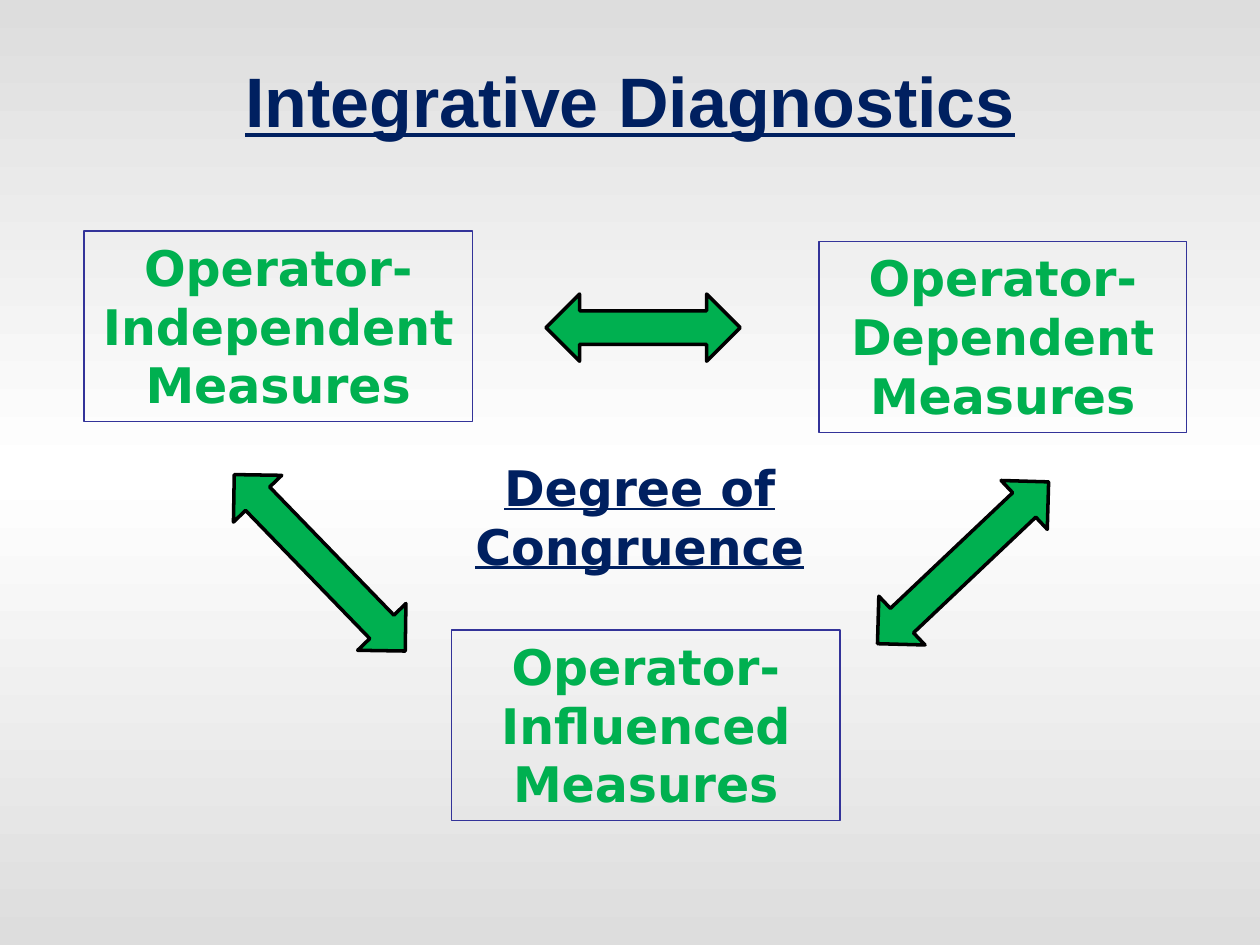
from copy import deepcopy

from pptx import Presentation
from pptx.dml.color import RGBColor
from pptx.enum.shapes import MSO_SHAPE
from pptx.enum.text import MSO_ANCHOR, MSO_AUTO_SIZE, PP_ALIGN
from pptx.util import Pt

RECTANGLE = MSO_SHAPE.RECTANGLE
DOUBLE_ARROW = MSO_SHAPE.LEFT_RIGHT_ARROW
TOP, MIDDLE = MSO_ANCHOR.TOP, MSO_ANCHOR.MIDDLE
GROW, FIXED = MSO_AUTO_SIZE.SHAPE_TO_FIT_TEXT, MSO_AUTO_SIZE.NONE
CENTER = PP_ALIGN.CENTER

NAVY = RGBColor(0x00, 0x20, 0x60)
GREEN = RGBColor(0x00, 0xB0, 0x50)
BORDER = RGBColor(0x33, 0x33, 0x99)
BLACK = RGBColor(0x00, 0x00, 0x00)
WHITE = RGBColor(0xFF, 0xFF, 0xFF)
GREY = RGBColor(0xDD, 0xDD, 0xDD)

TITLE_FONT = {"name": "Arial", "size": Pt(40), "bold": True, "underline": True}
LABEL_FONT = {"name": "DejaVu Sans", "size": Pt(28), "bold": True}
HEADING_FONT = {**LABEL_FONT, "underline": True}


class DiagramSlide:
    """Holds the style and the current slide; lengths are in points."""

    def __init__(self, page):
        self.page = page

    def background(self, edge, middle):
        fill = self.page.background.fill
        fill.gradient()
        fill.gradient_angle = 270
        # A new gradient has two stops; a third goes between them
        stop_list = self.page.element.xpath(".//a:gsLst")[0]
        stop_list.insert(1, deepcopy(stop_list[0]))
        for stop, position, color in zip(
            fill.gradient_stops, (0, 0.5, 1), (edge, middle, edge)
        ):
            stop.position = position
            stop.color.rgb = color

    def add_lines(self, shape, lines, font, color, **frame_format):
        frame = shape.text_frame
        for name, value in frame_format.items():
            setattr(frame, name, value)
        for index, line in enumerate(lines):
            para = frame.add_paragraph() if index else frame.paragraphs[0]
            para.alignment = CENTER
            span = para.add_run()
            span.text = line
            for name, value in font.items():
                setattr(span.font, name, value)
            span.font.color.rgb = color

    def title(self, text, left, top, width, height):
        title = self.page.shapes.title
        title.left, title.top = Pt(left), Pt(top)
        title.width, title.height = Pt(width), Pt(height)
        self.add_lines(title, [text], TITLE_FONT, NAVY,
                       vertical_anchor=MIDDLE, auto_size=FIXED)

    def shape(self, kind, area, line_color, line_width):
        shape = self.page.shapes.add_shape(kind, *map(Pt, area))
        shape.shadow.inherit = False
        shape.line.color.rgb = line_color
        shape.line.width = Pt(line_width)
        return shape

    def measure_box(self, quality, left, top, width):
        box = self.shape(RECTANGLE, (left, top, width, 109), BORDER, 0.75)
        box.fill.background()
        self.add_lines(box, ["Operator-", quality, "Measures"], LABEL_FONT, GREEN,
                       word_wrap=True, vertical_anchor=TOP, auto_size=GROW)

    def arrow(self, left, top, width, rotation=0):
        arrow = self.shape(DOUBLE_ARROW, (left, top, width, 38.4), BLACK, 2)
        arrow.fill.solid()
        arrow.fill.fore_color.rgb = GREEN
        arrow.rotation = rotation

    def heading(self, lines, left, top, width, height):
        box = self.page.shapes.add_textbox(*map(Pt, (left, top, width, height)))
        self.add_lines(box, lines, HEADING_FONT, NAVY,
                       word_wrap=False, auto_size=GROW)


def main():
    deck = Presentation()
    deck.slide_width, deck.slide_height = Pt(720), Pt(540)
    slide = DiagramSlide(deck.slides.add_slide(deck.slide_layouts[5]))

    # Background and title
    slide.background(GREY, WHITE)
    slide.title("Integrative Diagnostics", 12, 12, 696, 90)

    # The three kinds of measures
    slide.measure_box("Influenced", 258, 360, 222)
    slide.measure_box("Dependent", 468, 138, 210)
    slide.measure_box("Independent", 48, 132, 222)

    # Arrows between the boxes
    slide.arrow(112.5, 302.4, 140.4, 45.9)
    slide.arrow(483, 302.4, 134.6, 136.6)
    slide.arrow(312, 168, 111)

    # Centre of the triangle
    slide.heading(["Degree of", "Congruence"], 264, 258, 203, 75)

    deck.save("out.pptx")


if __name__ == "__main__":
    main()
